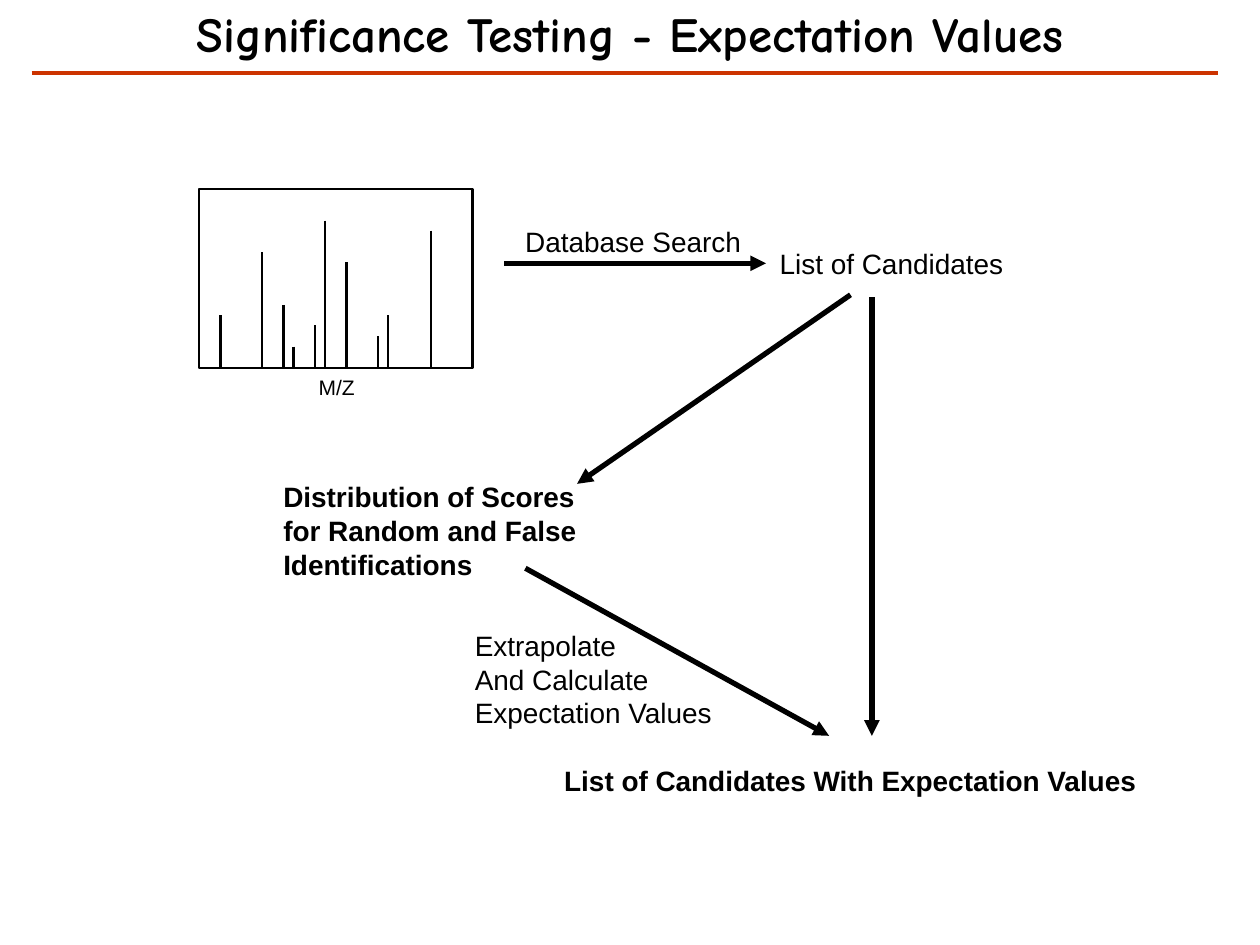
from lxml.etree import SubElement
from pptx import Presentation
from pptx.dml.color import RGBColor
from pptx.enum.shapes import MSO_CONNECTOR, MSO_SHAPE
from pptx.enum.text import MSO_ANCHOR, MSO_AUTO_SIZE, PP_ALIGN
from pptx.oxml.ns import qn
from pptx.util import Inches, Pt

COLORS = {"ink": "000000", "rule": "CC3300"}


def rgb(name):
    return RGBColor.from_string(COLORS[name])


def write(tf, text, font="Arial", size=16, bold=False, color="ink",
          align=PP_ALIGN.LEFT, spacing=1.0):
    for i, line in enumerate(text.split("\n")):
        p = tf.paragraphs[0] if i == 0 else tf.add_paragraph()
        p.alignment = align
        p.line_spacing = spacing
        r = p.add_run()
        r.text = line
        r.font.name = font
        r.font.size = Pt(size)
        r.font.bold = bold
        r.font.color.rgb = rgb(color)


class Deck:
    thin, thick = 1.5, 3

    def __init__(self, width, height):
        self.prs = Presentation()
        self.prs.slide_width = Inches(width)
        self.prs.slide_height = Inches(height)
        self.s = self.prs.slides.add_slide(self.prs.slide_layouts[6])

    def title(self, text, x, y, w, h):
        tf = self.s.shapes.add_textbox(*map(Inches, (x, y, w, h))).text_frame
        tf.word_wrap = True
        tf.vertical_anchor = MSO_ANCHOR.TOP
        tf.margin_left = tf.margin_right = tf.margin_top = tf.margin_bottom = 0
        write(tf, text, font="Comic Neue", size=28, bold=True,
              align=PP_ALIGN.CENTER, spacing=0.9)

    def label(self, text, x, y, w, h, **fmt):
        tf = self.s.shapes.add_textbox(*map(Inches, (x, y, w, h))).text_frame
        tf.word_wrap = False
        tf.auto_size = MSO_AUTO_SIZE.SHAPE_TO_FIT_TEXT
        write(tf, text, **fmt)

    def frame(self, x, y, w, h):
        sp = self.s.shapes.add_shape(MSO_SHAPE.RECTANGLE, *map(Inches, (x, y, w, h)))
        sp.shadow.inherit = False
        sp.fill.background()
        sp.line.color.rgb = rgb("ink")
        sp.line.width = Pt(self.thin)

    def line(self, x1, y1, x2, y2, width=thin, color="ink"):
        c = self.s.shapes.add_connector(MSO_CONNECTOR.STRAIGHT, *map(Inches, (x1, y1, x2, y2)))
        c.line.color.rgb = rgb(color)
        c.line.width = Pt(width)
        SubElement(c._element.spPr, qn("a:effectLst"))
        return c

    def arrow(self, x1, y1, x2, y2):
        c = self.line(x1, y1, x2, y2, width=self.thick)
        SubElement(c.line._get_or_add_ln(), qn("a:tailEnd"), type="triangle")

    def spectrum(self, x, y, w, h, peaks):
        self.frame(x, y, w, h)
        for px, top in peaks:
            self.line(px, top, px, y + h)


def main():
    d = Deck(10, 7.5)
    d.title("Significance Testing - Expectation Values", 0, 0.08, 10, 0.89)
    d.line(0.25, 0.58, 9.67, 0.58, width=2.5, color="rule")

    peaks = [(1.75, 2.5), (2.08, 2), (2.25, 2.42), (2.33, 2.75), (2.5, 2.58),
             (2.58, 1.75), (2.75, 2.08), (3, 2.67), (3.08, 2.5), (3.42, 1.83)]
    d.spectrum(1.58, 1.5, 2.17, 1.42, peaks)
    d.label("M/Z", 2.43, 2.92, 0.49, 0.3, size=12)

    d.label("Database Search", 4.07, 1.73, 1.93, 0.37)
    d.label("List of Candidates", 6.09, 1.91, 2, 0.37)
    d.label("Distribution of Scores\nfor Random and False\nIdentifications",
            2.15, 3.76, 2.6, 0.9, bold=True)
    d.label("Extrapolate\nAnd Calculate\nExpectation Values", 3.67, 4.94, 2.1, 0.9)
    d.label("List of Candidates With Expectation Values", 4.38, 6.01, 4.8, 0.37, bold=True)

    for ends in [(4, 2.09, 6.08, 2.09), (6.75, 2.34, 4.58, 3.84),
                 (4.17, 4.51, 6.58, 5.84), (6.92, 2.36, 6.92, 5.84)]:
        d.arrow(*ends)

    d.prs.save("out.pptx")


if __name__ == "__main__":
    main()
